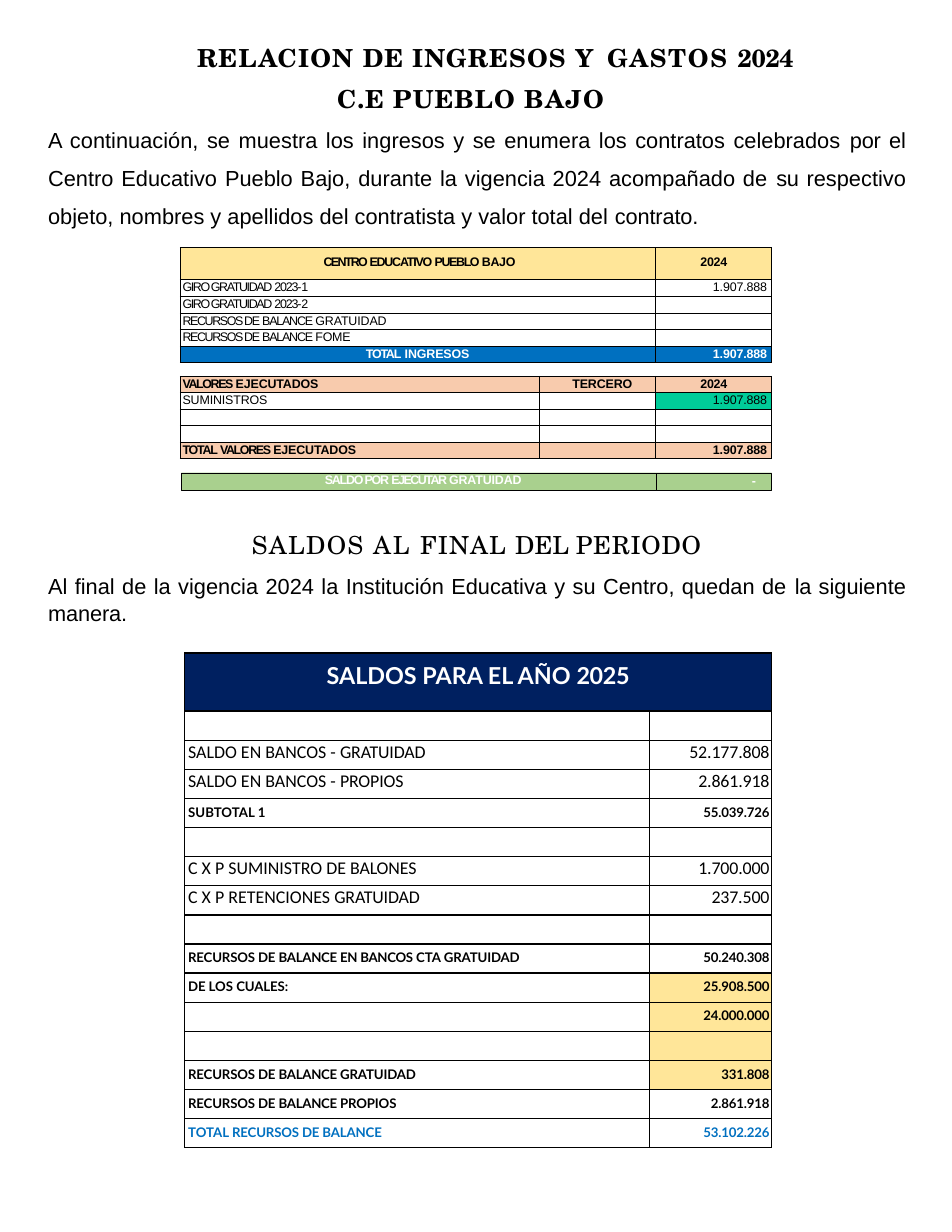
"""Build the 2024 income, expense and balance report slide."""
from dataclasses import dataclass, replace
from typing import Any

from lxml import etree
from pptx import Presentation
from pptx.dml.color import RGBColor as RGB
from pptx.enum.shapes import MSO_SHAPE as SHAPE
from pptx.enum.text import MSO_ANCHOR as ANCHOR, PP_ALIGN as AL
from pptx.oxml.ns import qn
from pptx.util import Inches, Pt


class Theme:
    black, white, blue = "000000", "FFFFFF", "0070C0"
    navy, cream, peach = "002060", "FFE699", "F8CBAD"
    mint, green = "00CC99", "A9D08E"
    serif, sans, heading, body = "TeX Gyre Schola", "Arial", "Lato", "Calibri"
    title, text, banner, balance, total, small, empty = 16, 14, 15, 11.5, 8.5, 8, 6


@dataclass(frozen=True)
class Style:
    size: float
    font: str
    bold: bool = False
    color: str = Theme.black
    align: Any = AL.LEFT
    indent: float = 0
    before: float = 0
    line: Any = None
    top: float = 0
    right: float = 0


TITLE = Style(Theme.title, Theme.serif, True, indent=1.34, before=8.2)
SUBTITLE = replace(TITLE, indent=2.59, before=7.2)
SECTION = replace(TITLE, bold=False, align=AL.CENTER, indent=0, before=1)
INTRO = Style(Theme.text, Theme.sans, align=AL.JUSTIFY, indent=0.01, before=1.5, line=1.44)
CLOSING = replace(INTRO, before=8, line=1.04)

ITEM = Style(Theme.small, Theme.sans, indent=0.02, line=Pt(9.4))
ITEM_BOLD = replace(ITEM, bold=True)
AMOUNT = replace(ITEM, align=AL.RIGHT, indent=0, right=0.04)
AMOUNT_BOLD = replace(AMOUNT, bold=True)
YEAR = replace(ITEM_BOLD, align=AL.CENTER, indent=0.01)
HEAD = replace(ITEM_BOLD, indent=1.28, before=4.8, line=None, top=0.07)
HEAD_YEAR = replace(HEAD, align=AL.CENTER, indent=0.01)
TOTAL = replace(ITEM_BOLD, align=AL.CENTER, indent=0, color=Theme.white)
TOTAL_AMOUNT = replace(AMOUNT_BOLD, color=Theme.white)
BAR = replace(ITEM_BOLD, indent=1.28, line=Pt(8.8), color=Theme.white)
BAR_AMOUNT = replace(TOTAL_AMOUNT, right=0.14)

BANNER = Style(Theme.banner, Theme.heading, True, Theme.white, AL.CENTER, before=5.9, top=0.08)
BALANCE = Style(Theme.balance, Theme.body, indent=0.03, before=0.8, top=0.01)
SUBTOTAL = Style(Theme.total, Theme.heading, True, indent=0.03, before=3.7, top=0.05)
FINAL = replace(SUBTOTAL, color=Theme.blue)


class Report:
    """Holds the slide and adds each kind of element to it."""

    def __init__(self, slide):
        self.s = slide

    def fill(self, target, color):
        if color:
            target.fill.solid()
            target.fill.fore_color.rgb = RGB.from_string(color)
        else:
            target.fill.background()

    def paragraph(self, p, runs, style):
        p.alignment = style.align
        p.space_before = Pt(style.before)
        if style.line:
            p.line_spacing = style.line
        pPr = p._p.get_or_add_pPr()
        pPr.set("marL", str(Inches(style.indent)))
        pPr.set("indent", "0")
        for text, spacing in runs:
            r = p.add_run()
            r.text = text
            r.font.size, r.font.name, r.font.bold = Pt(style.size), style.font, style.bold
            r.font.color.rgb = RGB.from_string(style.color)
            r._r.get_or_add_rPr().set("spc", str(round(spacing * 100)))

    def frame(self, tf, style):
        tf.word_wrap = True
        tf.vertical_anchor = ANCHOR.TOP
        tf.margin_left = tf.margin_bottom = 0
        tf.margin_top, tf.margin_right = Inches(style.top), Inches(style.right)

    def text(self, box, top, paragraphs):
        tf = self.s.shapes.add_textbox(*map(Inches, box)).text_frame
        self.frame(tf, Style(Theme.text, Theme.sans, top=top))
        for i, (runs, style) in enumerate(paragraphs):
            self.paragraph(tf.add_paragraph() if i else tf.paragraphs[0], runs, style)

    def bar(self, box, line=None, runs=(), style=BAR):
        sp = self.s.shapes.add_shape(SHAPE.RECTANGLE, *map(Inches, box))
        sp.shadow.inherit = False
        self.fill(sp, Theme.green)
        if line:
            sp.line.color.rgb, sp.line.width = RGB.from_string(Theme.black), Pt(line)
        else:
            sp.line.fill.background()
        self.frame(sp.text_frame, style)
        self.paragraph(sp.text_frame.paragraphs[0], runs, style)

    def border(self, cell, width):
        tcPr = cell._tc.get_or_add_tcPr()
        for side in ("lnL", "lnR", "lnT", "lnB"):
            ln = etree.SubElement(tcPr, qn("a:" + side), w=str(Pt(width)))
            solid = etree.SubElement(ln, qn("a:solidFill"))
            etree.SubElement(solid, qn("a:srgbClr"), val=Theme.black)

    def cell(self, cell, content, width):
        runs, style, color = content
        self.border(cell, width)
        self.fill(cell, color)
        cell.margin_left = cell.margin_bottom = 0
        cell.margin_top, cell.margin_right = Inches(style.top), Inches(style.right)
        p = cell.text_frame.paragraphs[0]
        if runs:
            self.paragraph(p, runs, style)
        else:
            p._p.get_or_add_endParaRPr().set("sz", str(Theme.empty * 100))

    def table(self, left, top, cols, heights, rows, width):
        size = map(Inches, (left, top, sum(cols), sum(heights)))
        tbl = self.s.shapes.add_table(len(rows), len(cols), *size).table
        tbl.first_row = tbl.horz_banding = False
        for column, w in zip(tbl.columns, cols):
            column.width = Inches(w)
        for i, (row, h) in enumerate(zip(rows, heights)):
            tbl.rows[i].height = Inches(h)
            for j, content in enumerate(row):
                self.cell(tbl.cell(i, j), content, width)
        return tbl


def blank(color=None):
    return (), ITEM, color


def amount(value, style, color=None):
    return [(value, -0.1)], style, color


def balance(runs, value, style=BALANCE, color=None):
    right = replace(style, align=AL.RIGHT, indent=0, right=0.02)
    return (runs, style, None), amount(value, right, color) if value else blank(color)


def main():
    prs = Presentation()
    prs.slide_width, prs.slide_height = Inches(8.5), Inches(11)
    report = Report(prs.slides.add_slide(prs.slide_layouts[6]))

    report.text((0.42, 0.27, 7.67, 1.76), 0.11, [
        ([("RELACION ", 0.8), ("DE ", 0.6), ("INGRESOS ", 0.8), ("Y ", 2.2), ("GASTOS ", 1.1), ("2024", -0.2)], TITLE),
        ([("C.E ", 0.6), ("PUEBLO ", 0.7), ("BAJO", 1)], SUBTITLE),
        ([("A continuación, se muestra los ingresos y se enumera los contratos celebrados ", 0), ("por ", -0.2),
          ("el Centro Educativo Pueblo Bajo, durante la vigencia 2024 acompañado de ", 0), ("su ", -0.2),
          ("respectivo objeto, nombres y apellidos del contratista y valor total del", 0), (" contrato.", -0.1)], INTRO)])
    report.text((0.42, 4.72, 7.67, 0.87), 0.01, [
        ([("SALDOS ", 0.9), ("AL ", 1.2), ("FINAL ", 0.8), ("DEL ", 0), ("PERIODO", 0.5)], SECTION),
        ([("Al final de la vigencia 2024 la Institución Educativa y su Centro, quedan de ", 0), ("la ", -0.2),
          ("siguiente", 0), (" manera.", -0.1)], CLOSING)])

    giro = ("GIRO GRATUIDAD ", -0.9), ("2023-", -0.8)
    recursos = ("RECURSOS DE ", -0.9), ("BALANCE ", -0.8)
    report.table(1.61, 2.21, [4.24, 1.04], [0.29] + [0.148] * 5, [
        [([("CENTRO ", -1.1), ("EDUCATIVO ", -0.8), ("PUEBLO ", -0.9), ("BAJO", -0.2)], HEAD, Theme.cream),
         ([("2024", -0.2)], HEAD_YEAR, Theme.cream)],
        [([*giro, ("1", -0.5)], ITEM, None), amount("1.907.888", AMOUNT)],
        [([*giro, ("2", -0.5)], ITEM, None), blank()],
        [([*recursos, ("GRATUIDAD", -0.1)], ITEM, None), blank()],
        [([*recursos, ("FOME", -0.2)], ITEM, None), blank()],
        [([("TOTAL", -0.8), (" INGRESOS", -0.1)], TOTAL, Theme.blue),
         amount("1.907.888", TOTAL_AMOUNT, Theme.blue)]], 0.75)

    valores = ("VALORES ", -0.9), ("EJECUTADOS", -0.1)
    report.table(1.61, 3.36, [3.21, 1.03, 1.04], [0.148] * 5, [
        [(valores, ITEM_BOLD, Theme.peach), ([("TERCERO", -0.1)], replace(ITEM_BOLD, indent=0.29), Theme.peach),
         ([("2024", -0.2)], YEAR, Theme.peach)],
        [([("SUMINISTROS", -0.1)], ITEM, None), blank(), amount("1.907.888", AMOUNT, Theme.mint)],
        [blank()] * 3,
        [blank()] * 3,
        [([("TOTAL ", -0.8), *valores], ITEM_BOLD, Theme.peach), blank(Theme.peach),
         amount("1.907.888", AMOUNT_BOLD, Theme.peach)]], 0.75)

    report.bar((1.62, 4.22, 5.27, 0.16))
    report.bar((5.85, 4.23, 1.04, 0.15), 0.55, [("-", -0.5)], BAR_AMOUNT)
    report.bar((1.62, 4.23, 4.24, 0.15), 0.54, [("SALDO POR ", -0.8), ("EJECUTAR ", -1), ("GRATUIDAD", -0.1)])

    bancos, gratuidad, propios = ("SALDO EN BANCOS - ", 0), ("GRATUIDAD", -0.1), ("PROPIOS", -0.1)
    recursos = ("RECURSOS DE ", -0.1), ("BALANCE ", -0.2)
    tbl = report.table(1.65, 5.83, [4.15, 1.09], [0.52] + [0.26] * 15, [
        [([("SALDOS PARA EL AÑO ", 0), ("2025", -0.2)], BANNER, Theme.navy), blank(Theme.navy)],
        [blank()] * 2,
        balance([bancos, gratuidad], "52.177.808"),
        balance([bancos, propios], "2.861.918"),
        balance([("SUBTOTAL ", 0), ("1", -0.5)], "55.039.726", SUBTOTAL),
        [blank()] * 2,
        balance([("C X P SUMINISTRO DE ", 0), ("BALONES", -0.1)], "1.700.000"),
        balance([("C X P RETENCIONES ", 0), gratuidad], "237.500"),
        [blank()] * 2,
        balance([*recursos, ("EN ", -0.3), ("BANCOS ", -0.2), ("CTA ", 0), gratuidad], "50.240.308", SUBTOTAL),
        balance([("DE ", -0.1), ("LOS ", 0), ("CUALES:", -0.1)], "25.908.500", SUBTOTAL, Theme.cream),
        balance([], "24.000.000", SUBTOTAL, Theme.cream),
        balance([], "", SUBTOTAL, Theme.cream),
        balance([*recursos, gratuidad], "331.808", SUBTOTAL, Theme.cream),
        balance([*recursos, propios], "2.861.918", SUBTOTAL),
        balance([("TOTAL ", 0), ("RECURSOS DE BALANCE", -0.1)], "53.102.226", FINAL)], 1)
    tbl.cell(0, 0).merge(tbl.cell(0, 1))
    prs.save("out.pptx")


if __name__ == "__main__":
    main()
